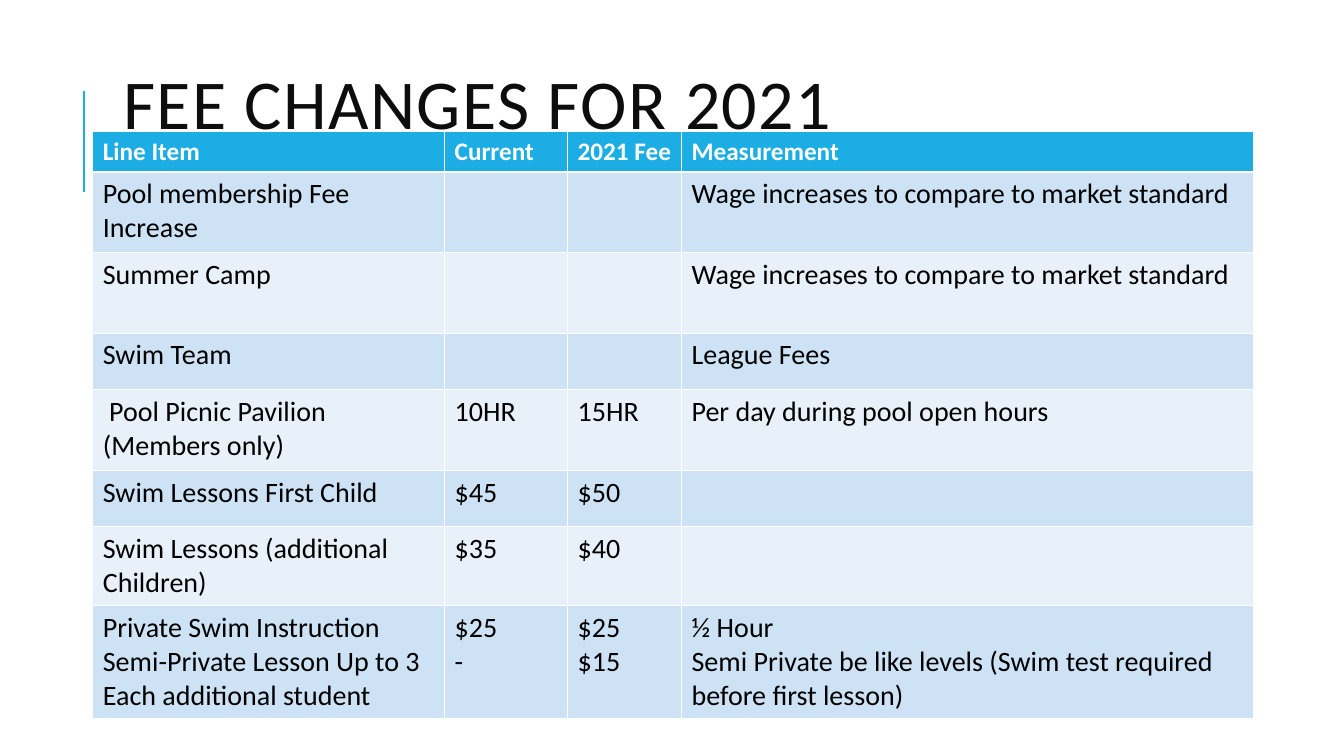
from pptx import Presentation
from pptx.dml.color import RGBColor
from pptx.enum.shapes import MSO_CONNECTOR as Connector
from pptx.enum.text import MSO_ANCHOR as Anchor, PP_ALIGN as Align
from pptx.oxml.ns import qn
from pptx.util import Inches, Pt
from lxml.etree import SubElement

TITLE = "FEE CHANGES FOR 2021"
HEADINGS = ("Line Item", "Current", "2021 Fee", "Measurement")
FEES = [
    ("Pool membership Fee Increase", "", "", "Wage increases to compare to market standard"),
    ("Summer Camp", "", "", "Wage increases to compare to market standard"),
    ("Swim Team", "", "", "League Fees"),
    (" Pool Picnic Pavilion (Members only)", "10HR", "15HR", "Per day during pool open hours"),
    ("Swim Lessons First Child", "$45", "$50", ""),
    ("Swim Lessons (additional Children)", "$35", "$40", ""),
    (
        "Private Swim Instruction\nSemi-Private Lesson Up to 3\nEach additional student",
        "$25\n-",
        "$25\n$15",
        "½ Hour\nSemi Private be like levels (Swim test required before first lesson)",
    ),
]
COLUMN_WIDTHS = (3.49, 1.22, 1.13, 5.67)
ROW_HEIGHTS = (0.25, 0.8, 0.8, 0.56, 0.8, 0.56, 0.56, 0.56)

THEME = {
    "accent": RGBColor.from_string("1CADE4"),
    "bands": (RGBColor.from_string("CDE3F5"), RGBColor.from_string("E8F1FA")),
    "title": {"name": "Calibri", "size": Pt(50), "bold": False},
    "title_color": RGBColor.from_string("0D0D0D"),
    "heading": {"name": "Calibri", "size": Pt(18), "bold": True},
    "heading_color": RGBColor.from_string("FFFFFF"),
    "fee": {"name": "Calibri", "size": Pt(20), "bold": False},
    "fee_color": RGBColor.from_string("000000"),
}


def apply(target, values):
    for key, value in values.items():
        setattr(target, key, value)


def style_font(font, role):
    apply(font, THEME[role])
    font.color.rgb = THEME[role + "_color"]


def add_title(slide):
    title = slide.shapes.title
    apply(title, {"left": Inches(1.12), "top": Inches(0.64),
                  "width": Inches(10.63), "height": Inches(1.64)})
    frame = title.text_frame
    frame.text = TITLE
    apply(frame, {"vertical_anchor": Anchor.TOP, "margin_top": Inches(0.11), "word_wrap": True})
    heading = frame.paragraphs[0]
    apply(heading, {"alignment": Align.LEFT, "line_spacing": 0.8})
    font = heading.runs[0].font
    style_font(font, "title")
    heading.runs[0]._r.get_or_add_rPr().set("spc", "100")


def add_accent_line(slide):
    accent = slide.shapes.add_connector(
        Connector.STRAIGHT, Inches(0.83), Inches(1.9), Inches(0.83), Inches(0.9))
    accent.line.color.rgb = THEME["accent"]
    accent.line.width = Pt(1.5)
    SubElement(accent._element.spPr, qn("a:effectLst"))


def fill_cell(cell, text, role, color):
    cell.fill.solid()
    cell.fill.fore_color.rgb = color
    cell.text_frame.text = text
    for paragraph in cell.text_frame.paragraphs:
        for run in paragraph.runs:
            style_font(run.font, role)


def add_fee_table(slide):
    rows = [HEADINGS, *FEES]
    fees = slide.shapes.add_table(
        len(rows), len(HEADINGS), Inches(0.92), Inches(1.3),
        Inches(sum(COLUMN_WIDTHS)), Inches(sum(ROW_HEIGHTS))).table
    for column, width in zip(fees.columns, COLUMN_WIDTHS):
        column.width = Inches(width)
    for index, (row, height, texts) in enumerate(zip(fees.rows, ROW_HEIGHTS, rows)):
        row.height = Inches(height)
        role = "fee" if index else "heading"
        color = THEME["bands"][(index - 1) % 2] if index else THEME["accent"]
        for cell, text in zip(row.cells, texts):
            fill_cell(cell, text, role, color)


def main():
    deck = Presentation()
    apply(deck, {"slide_width": Inches(13.33), "slide_height": Inches(7.5)})
    slide = deck.slides.add_slide(deck.slide_layouts[5])
    add_accent_line(slide)
    add_title(slide)
    add_fee_table(slide)
    deck.save("out.pptx")


if __name__ == "__main__":
    main()
